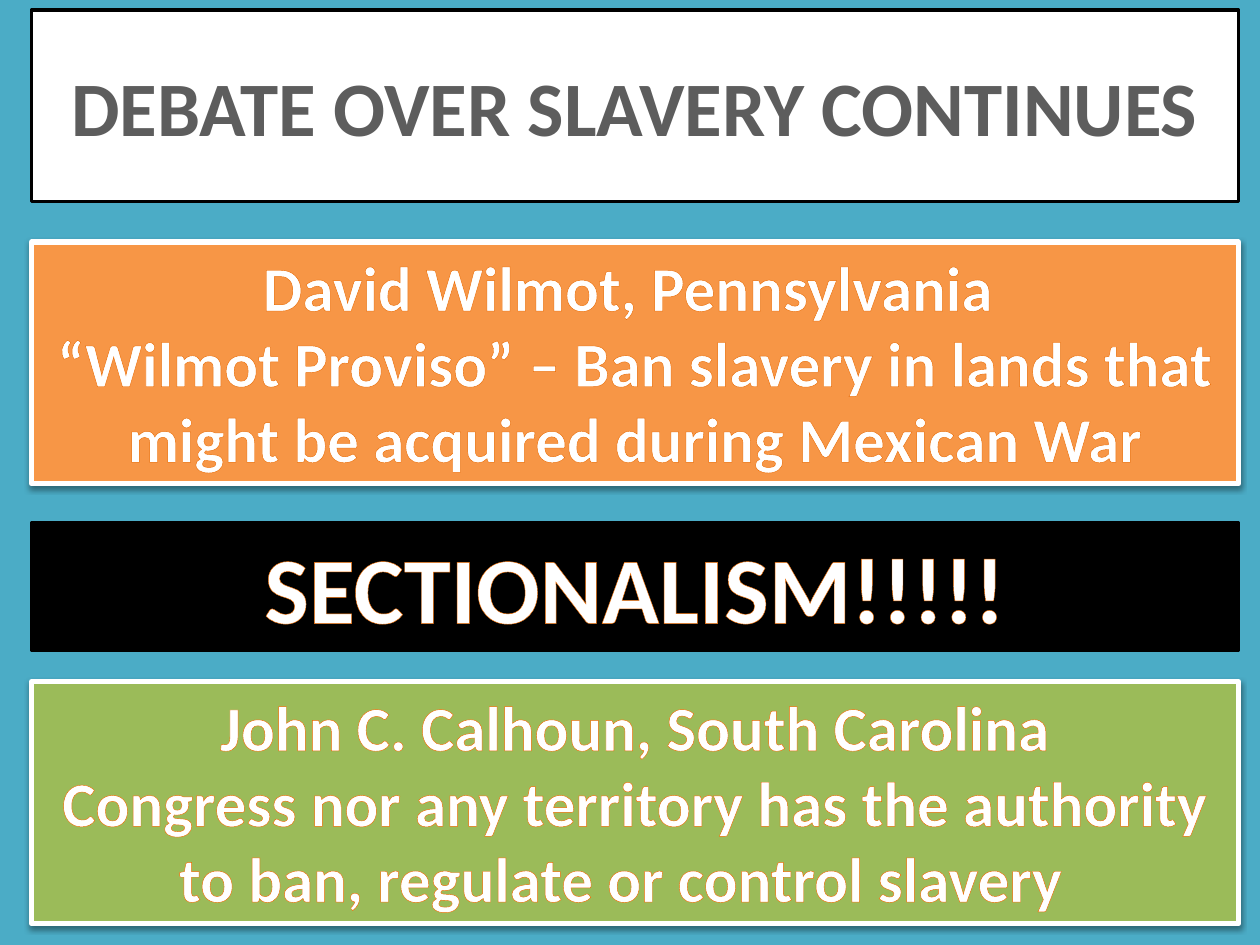
from dataclasses import dataclass
from lxml.etree import SubElement as Sub
from pptx import Presentation
from pptx.dml.color import RGBColor as RGB
from pptx.enum.shapes import MSO_SHAPE as Shape
from pptx.enum.text import MSO_ANCHOR as Anchor, MSO_AUTO_SIZE as Auto, PP_ALIGN as Align
from pptx.oxml.ns import qn
from pptx.util import Inches, Pt


@dataclass(frozen=True)
class Theme:
    """Colours, font and type sizes of the slide."""
    back: str = "4BACC6"
    white: str = "FFFFFF"
    black: str = "000000"
    gray: str = "5D5D5D"
    orange: str = "F79646"
    green: str = "9BBB59"
    edge: str = "EB6A00"
    font: str = "Calibri"
    head: int = 44
    body: int = 36
    shout: int = 54


THEME = Theme()


def add_color(node, color):
    """Add a solid colour to an XML node and return the colour element."""
    fill = Sub(node, qn("a:solidFill"))
    return Sub(fill, qn("a:srgbClr"), val=color)


def add_shadow(shape):
    """Give a shape a soft shadow below it."""
    effects = shape._element.spPr.find(qn("a:effectLst"))
    shade = Sub(effects, qn("a:outerShdw"), blurRad=str(Pt(3.1)),
                dist=str(Pt(1.6)), dir="5400000", rotWithShape="0")
    tint = Sub(shade, qn("a:srgbClr"), val=THEME.black)
    Sub(tint, qn("a:alpha"), val="38000")


def add_text(frame, lines, size, color=THEME.white, edge=THEME.edge, width=2.48):
    """Write bold centred lines with outlined letters."""
    for i, line in enumerate(lines):
        para = frame.add_paragraph() if i else frame.paragraphs[0]
        para.alignment = Align.CENTER
        run = para.add_run()
        run.text = line
        font = run.font
        font.name, font.size, font.bold = THEME.font, Pt(size), True
        font.color.rgb = RGB.from_string(color)
        props = run._r.get_or_add_rPr()
        stroke = Sub(props, qn("a:ln"), w=str(Pt(width)))
        add_color(stroke, edge)
        props.insert(0, stroke)


def add_panel(slide, box, fill, line, weight):
    """Draw a bordered rectangle in the box and return it."""
    shape = slide.shapes.add_shape(Shape.RECTANGLE, *map(Inches, box))
    shape.shadow.inherit = False
    shape.fill.solid()
    shape.fill.fore_color.rgb = RGB.from_string(fill)
    shape.line.color.rgb = RGB.from_string(line)
    shape.line.width = Pt(weight)
    frame = shape.text_frame
    frame.word_wrap = True
    frame.vertical_anchor = Anchor.TOP
    return shape


def add_title(slide, box, text):
    """Place the white title panel."""
    frame = add_panel(slide, box, THEME.white, THEME.black, 2).text_frame
    frame.vertical_anchor = Anchor.MIDDLE
    add_text(frame, [text], THEME.head, color=THEME.gray, edge=THEME.white, width=1.4)


def add_view(slide, box, fill, lines):
    """Place a coloured panel with one speaker's view."""
    shape = add_panel(slide, box, fill, THEME.white, 3)
    add_shadow(shape)
    shape.text_frame.auto_size = Auto.SHAPE_TO_FIT_TEXT
    add_text(shape.text_frame, lines, THEME.body)


def add_shout(slide, box, text):
    """Place the black banner."""
    frame = add_panel(slide, box, THEME.black, THEME.black, 2).text_frame
    frame.auto_size = Auto.SHAPE_TO_FIT_TEXT
    add_text(frame, [text], THEME.shout)


def main():
    """Build and save the slide."""
    deck = Presentation()
    deck.slide_width, deck.slide_height = Inches(10), Inches(7.5)
    slide = deck.slides.add_slide(deck.slide_layouts[6])
    back = slide.background.fill
    back.solid()
    back.fore_color.rgb = RGB.from_string(THEME.back)

    left, width, tall = 0.25, 9.58, 1.92
    add_title(slide, (left, 0.08, width, 1.52), "DEBATE OVER SLAVERY CONTINUES")
    add_view(slide, (left, 1.92, width, tall), THEME.orange, [
        "David Wilmot, Pennsylvania ",
        "“Wilmot Proviso” – Ban slavery in lands that might be acquired during Mexican War",
    ])
    add_view(slide, (left, 5.41, width, tall), THEME.green, [
        "John C. Calhoun, South Carolina",
        "Congress nor any territory has the authority to ban, regulate or control slavery  ",
    ])
    add_shout(slide, (left, 4.15, width, 1.01), "SECTIONALISM!!!!!")
    deck.save("out.pptx")


if __name__ == "__main__":
    main()
